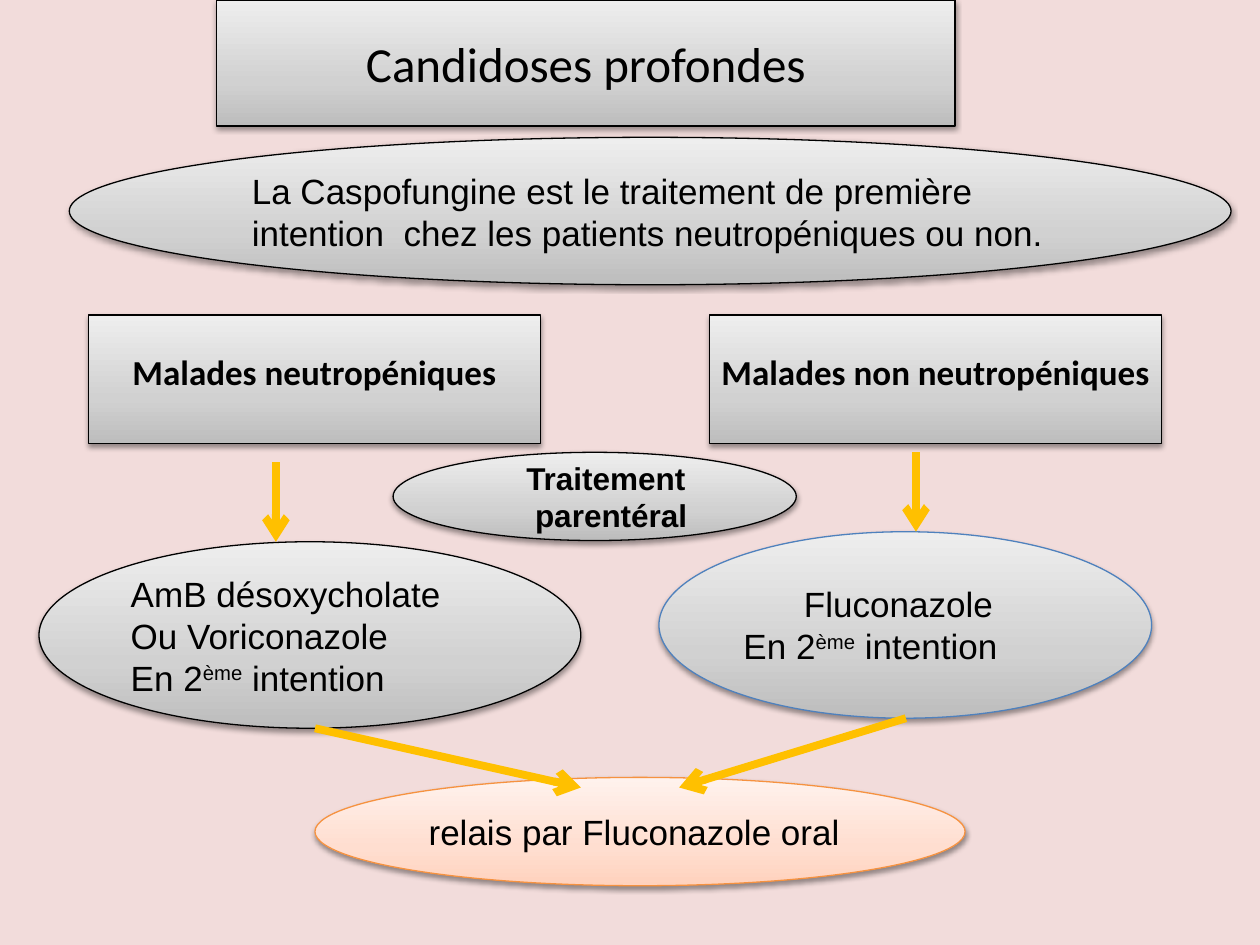
from copy import deepcopy
from dataclasses import dataclass

from lxml import etree
from pptx import Presentation
from pptx import util as u
from pptx.dml.color import RGBColor
from pptx.enum import shapes, text
from pptx.oxml.ns import qn


@dataclass(frozen=True)
class Theme:
    background: str = "F2DCDB"
    ink: str = "000000"
    blue: str = "4F81BD"
    orange: str = "F69240"
    arrow: str = "FFC000"
    grey_fade: tuple = ("BDBDBD", "D1D1D1", "EEEEEE")
    peach_fade: tuple = ("FFD2BD", "FFDED0", "FFF2ED")
    heading_font: str = "Calibri"
    body_font: str = "Arial"
    title_size: int = 28
    body_size: int = 20
    small_size: int = 18


theme = Theme()


def style_box(box, fade, outline):
    box.fill.gradient()
    box.fill.gradient_angle = 90
    first_stop = box._element.spPr.find(".//" + qn("a:gs"))
    first_stop.addnext(deepcopy(first_stop))
    for stop, position, color in zip(box.fill.gradient_stops, (0, 0.35, 1), fade):
        stop.position = position
        stop.color.rgb = RGBColor.from_string(color)
    box.line.color.rgb = RGBColor.from_string(outline)
    box.line.width = u.Pt(0.75)
    box.shadow.inherit = False
    effects = box._element.spPr.find(qn("a:effectLst"))
    shadow = etree.SubElement(effects, qn("a:outerShdw"), blurRad="40000",
                              dist="20000", dir="5400000", rotWithShape="0")
    tint = etree.SubElement(shadow, qn("a:srgbClr"), val=theme.ink)
    etree.SubElement(tint, qn("a:alpha"), val="38000")


def write_text(box, lines, font, size, bold=False, align=text.PP_ALIGN.LEFT):
    frame = box.text_frame
    frame.word_wrap = True
    frame.vertical_anchor = text.MSO_ANCHOR.MIDDLE
    for number, (indent, runs) in enumerate(lines):
        para = frame.paragraphs[0] if number == 0 else frame.add_paragraph()
        para.alignment = align
        if indent:
            para._p.get_or_add_pPr().set("marL", str(u.Inches(indent)))
        for words in runs:
            span = para.add_run()
            span.text = words
            span.font.name = font
            span.font.size = u.Pt(size)
            span.font.bold = bold
            span.font.color.rgb = RGBColor.from_string(theme.ink)
            if words == "ème":
                span._r.get_or_add_rPr().set("baseline", "30000")


deck = Presentation()
deck.slide_width, deck.slide_height = u.Inches(10), u.Inches(7.5)
page = deck.slides.add_slide(deck.slide_layouts[5])
page.background.fill.solid()
page.background.fill.fore_color.rgb = RGBColor.from_string(theme.background)

title = page.shapes.title
title.left, title.top = u.Inches(1.72), u.Inches(0)
title.width, title.height = u.Inches(5.86), u.Inches(1)
style_box(title, theme.grey_fade, theme.ink)
write_text(title, [(0, ["Candidoses profondes"])], theme.heading_font,
           theme.title_size, align=text.PP_ALIGN.CENTER)

for left, label in ((0.7, "Malades neutropéniques"), (5.63, "Malades non neutropéniques")):
    box = page.shapes.add_shape(shapes.MSO_SHAPE.RECTANGLE, u.Inches(left),
                                u.Inches(2.5), u.Inches(3.59), u.Inches(1.02))
    style_box(box, theme.grey_fade, theme.ink)
    write_text(box, [(0, [label])], theme.heading_font, theme.body_size,
               bold=True, align=text.PP_ALIGN.CENTER)
    box.text_frame.word_wrap = False
    box.text_frame.margin_bottom = u.Inches(0.17)

second_choice = (0, ["En 2", "ème", " intention"])
ovals = [
    (0.55, 1.09, 9.22, 1.17, theme.grey_fade, theme.ink,
     [(0, ["La Caspofungine est le traitement de première intention  "
           "chez les patients neutropéniques ou non."])]),
    (0.31, 4.3, 4.3, 1.48, theme.grey_fade, theme.ink,
     [(0, ["AmB désoxycholate"]), (0, ["Ou Voriconazole"]), second_choice]),
    (5.23, 4.22, 3.91, 1.48, theme.grey_fade, theme.blue,
     [(0.48, ["Fluconazole"]), second_choice]),
]
for left, top, width, height, fade, outline, lines in ovals:
    oval = page.shapes.add_shape(shapes.MSO_SHAPE.OVAL, u.Inches(left), u.Inches(top),
                                 u.Inches(width), u.Inches(height))
    style_box(oval, fade, outline)
    write_text(oval, lines, theme.body_font, theme.body_size)

relay = page.shapes.add_shape(shapes.MSO_SHAPE.OVAL, u.Inches(2.5), u.Inches(6.17),
                              u.Inches(5.16), u.Inches(0.86))
style_box(relay, theme.peach_fade, theme.orange)
write_text(relay, [(0, ["relais par Fluconazole oral"])], theme.body_font,
           theme.body_size, align=text.PP_ALIGN.CENTER)
relay.text_frame.margin_right = u.Inches(0.19)

arrows = [
    (2.19, 3.67, 2.19, 4.3),
    (2.5, 5.78, 4.61, 6.25),
    (7.27, 3.59, 7.27, 4.22),
    (7.19, 5.7, 5.39, 6.25),
]
for ends in arrows:
    arrow = page.shapes.add_connector(shapes.MSO_CONNECTOR.STRAIGHT,
                                      *[u.Inches(end) for end in ends])
    arrow.line.color.rgb = RGBColor.from_string(theme.arrow)
    arrow.line.width = u.Pt(4.5)
    etree.SubElement(arrow.line._get_or_add_ln(), qn("a:tailEnd"), type="arrow")
    etree.SubElement(arrow._element.spPr, qn("a:effectLst"))

route = page.shapes.add_shape(shapes.MSO_SHAPE.OVAL, u.Inches(3.12), u.Inches(3.59),
                              u.Inches(3.2), u.Inches(0.7))
style_box(route, theme.grey_fade, theme.ink)
write_text(route, [(0.49, ["Traitement"]), (0.56, ["parentéral"])], theme.body_font,
           theme.small_size, bold=True)

deck.save("out.pptx")
